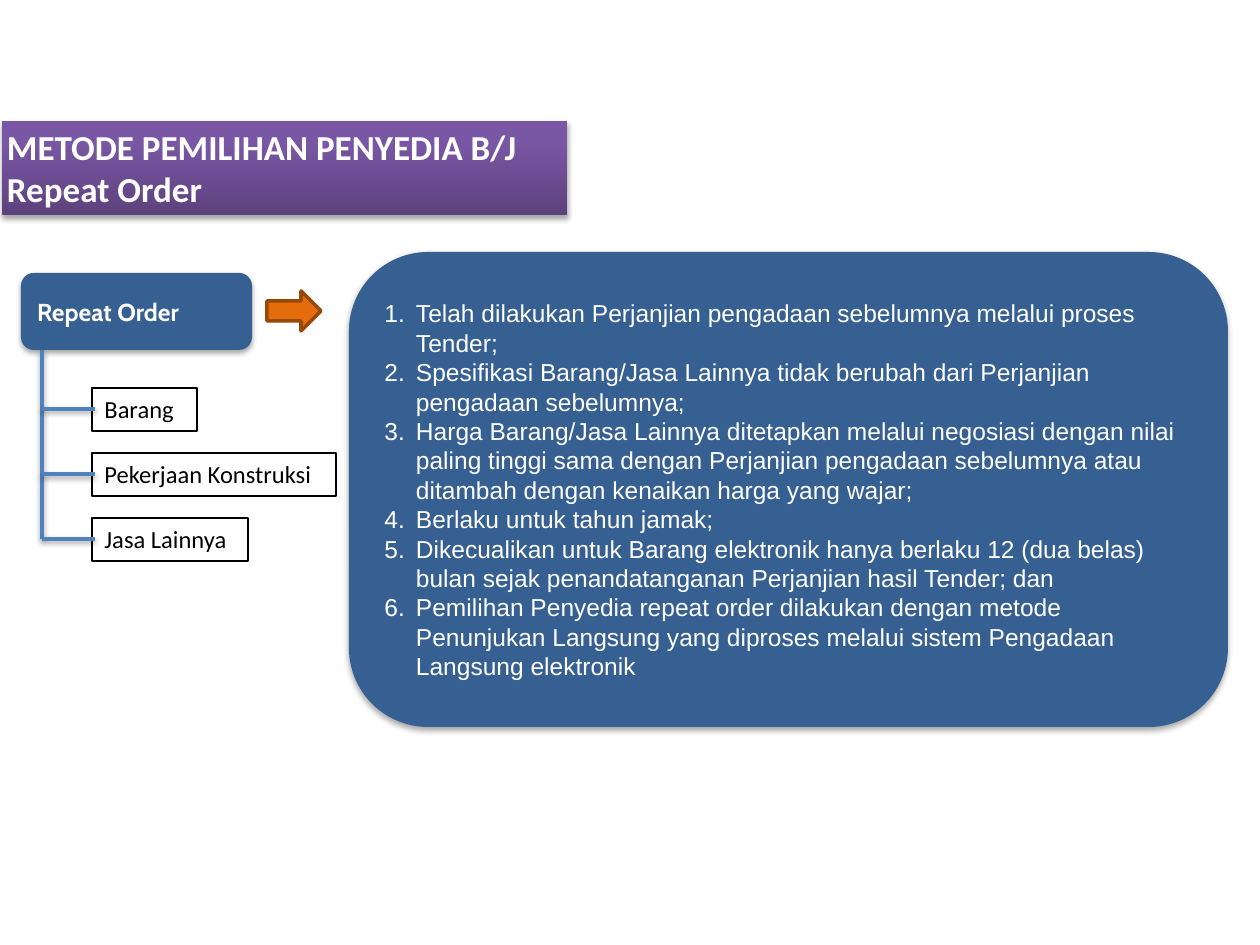
from pptx import Presentation
from pptx.dml.color import RGBColor
from pptx.enum.shapes import MSO_CONNECTOR, MSO_SHAPE
from pptx.enum.text import MSO_ANCHOR, MSO_AUTO_SIZE, PP_ALIGN
from pptx.oxml import parse_xml
from pptx.oxml.ns import nsdecls
from pptx.util import Emu, Pt

PX = 914400 / 126
NAVY, BLUE, ORANGE, BROWN = "376092", "4F81BD", "E46C0A", "984807"
WHITE, BLACK = "FFFFFF", "000000"
TITLE_STOPS = [(0, "5D427D"), (80, "7A57A5"), (100, "7A56A7")]

TITLE = ["METODE PEMILIHAN PENYEDIA B/J", "Repeat Order"]
KINDS = [("Barang", 105), ("Pekerjaan Konstruksi", 244), ("Jasa Lainnya", 156)]
CRITERIA = [
    "Telah dilakukan Perjanjian pengadaan sebelumnya melalui proses Tender;",
    "Spesifikasi Barang/Jasa Lainnya tidak berubah dari Perjanjian pengadaan sebelumnya;",
    "Harga Barang/Jasa Lainnya ditetapkan melalui negosiasi dengan nilai paling tinggi sama "
    "dengan Perjanjian pengadaan sebelumnya atau ditambah dengan kenaikan harga yang wajar;",
    "Berlaku untuk tahun jamak;",
    "Dikecualikan untuk Barang elektronik hanya berlaku 12 (dua belas) bulan sejak "
    "penandatanganan Perjanjian hasil Tender; dan",
    "Pemilihan Penyedia repeat order dilakukan dengan metode Penunjukan Langsung yang "
    "diproses melalui sistem Pengadaan Langsung elektronik",
]


def px(*lengths):
    return [Emu(round(length * PX)) for length in lengths]


def rgb(color):
    return RGBColor.from_string(color)


def set_all(target, values):
    for name, value in values.items():
        setattr(target, name, value)


class SlideBuilder:
    def __init__(self, slide):
        self.slide = slide
        self.title_font = {"name": "Calibri", "size": Pt(20), "bold": True}
        self.head_font = {"name": "Cabin", "size": Pt(14), "bold": True}
        self.list_font = {"name": "Arial", "size": Pt(14)}
        self.label_font = {"name": "Calibri", "size": Pt(14)}

    def shadow(self, shape, alpha=35, distance=23000):
        """Give the shape a soft shadow that falls straight down."""
        properties = shape._element.spPr
        effects = parse_xml(
            f'<a:effectLst {nsdecls("a")}><a:outerShdw blurRad="40000" dist="{distance}" '
            f'dir="5400000" rotWithShape="0"><a:srgbClr val="{BLACK}">'
            f'<a:alpha val="{alpha * 1000}"/></a:srgbClr></a:outerShdw></a:effectLst>')
        properties.append(effects)

    def put_text(self, shape, lines, font, color, numbered=False, **frame_values):
        frame = shape.text_frame
        set_all(frame, {"word_wrap": True, "auto_size": MSO_AUTO_SIZE.NONE,
                        "vertical_anchor": MSO_ANCHOR.MIDDLE, **frame_values})
        for index, line in enumerate(lines):
            para = frame.add_paragraph() if index else frame.paragraphs[0]
            para.alignment = PP_ALIGN.LEFT
            if numbered:
                self.number(para)
            span = para.add_run()
            span.text = line
            set_all(span.font, font)
            span.font.color.rgb = rgb(color)

    def number(self, para):
        """Number the paragraph automatically, with a hanging indent."""
        properties = para._p.get_or_add_pPr()
        properties.set("marL", "228600")
        properties.set("indent", "-228600")
        for element in (f'<a:buClr {nsdecls("a")}><a:srgbClr val="{WHITE}"/></a:buClr>',
                        f'<a:buFont {nsdecls("a")} typeface="+mj-lt"/>',
                        f'<a:buAutoNum {nsdecls("a")} type="arabicPeriod"/>'):
            properties.append(parse_xml(element))

    def title(self, lines, left, top, width, height):
        title = self.slide.shapes.title
        set_all(title, dict(zip(("left", "top", "width", "height"),
                                px(left, top, width, height))))
        stops = "".join(f'<a:gs pos="{place * 1000}"><a:srgbClr val="{color}"/></a:gs>'
                        for place, color in TITLE_STOPS)
        title._element.spPr.append(parse_xml(
            f'<a:gradFill {nsdecls("a")}><a:gsLst>{stops}</a:gsLst>'
            '<a:lin ang="16200000" scaled="0"/></a:gradFill>'))
        self.shadow(title)
        side, = px(5)
        self.put_text(title, lines, self.title_font, WHITE,
                      margin_left=side, margin_right=side)

    def shape(self, kind, bounds, fill=None, line=None, weight=0.75):
        shape = self.slide.shapes.add_shape(kind, *px(*bounds))
        if fill:
            shape.fill.solid()
            shape.fill.fore_color.rgb = rgb(fill)
        else:
            shape.fill.background()
        if line:
            shape.line.color.rgb = rgb(line)
            shape.line.width = Pt(weight)
        else:
            shape.line.fill.background()
        return shape

    def panel(self, lines, font, bounds, numbered=False):
        panel = self.shape(MSO_SHAPE.ROUNDED_RECTANGLE, bounds, NAVY)
        self.shadow(panel)
        self.put_text(panel, lines, font, WHITE, numbered)

    def arrow(self, *bounds):
        arrow = self.shape(MSO_SHAPE.RIGHT_ARROW, bounds, ORANGE, BROWN, 2)
        arrow.shadow.inherit = False

    def label(self, text, *bounds):
        label = self.shape(MSO_SHAPE.RECTANGLE, bounds, line=BLACK)
        label.shadow.inherit = False
        self.put_text(label, [text], self.label_font, BLACK, vertical_anchor=MSO_ANCHOR.TOP)

    def line(self, *ends):
        line = self.slide.shapes.add_connector(MSO_CONNECTOR.STRAIGHT, *px(*ends))
        line.line.color.rgb = rgb(BLUE)
        line.line.width = Pt(2)
        self.shadow(line, 38, 20000)


def main():
    deck = Presentation()
    deck.slide_width, deck.slide_height = px(1260, 945)
    page = SlideBuilder(deck.slides.add_slide(deck.slide_layouts[5]))

    page.title(TITLE, 2, 121, 565, 94)
    page.panel(["Repeat Order"], page.head_font, (21, 273, 231, 77))
    page.arrow(267, 291, 54, 40)
    page.panel(CRITERIA, page.list_font, (349, 252, 879, 475), numbered=True)

    trunk, first, step, height = 42, 388, 65, 43
    middles = [first + step * index + height // 2 for index in range(len(KINDS))]
    page.line(trunk, 350, trunk, middles[-1])
    for (text, width), middle in zip(KINDS, middles):
        page.label(text, 92, middle - height // 2, width, height)
        page.line(trunk, middle, 95, middle)

    deck.save("out.pptx")


if __name__ == "__main__":
    main()
